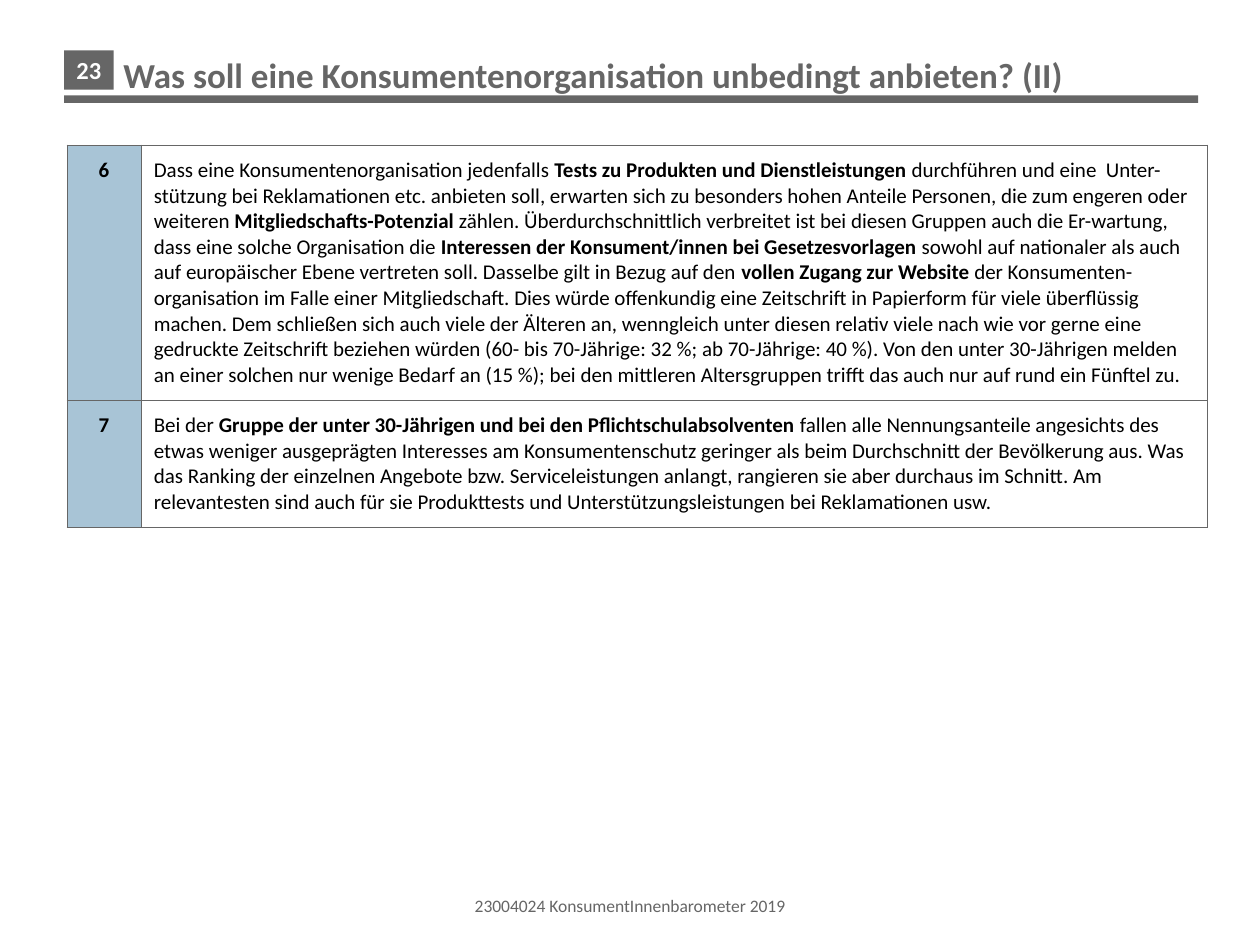
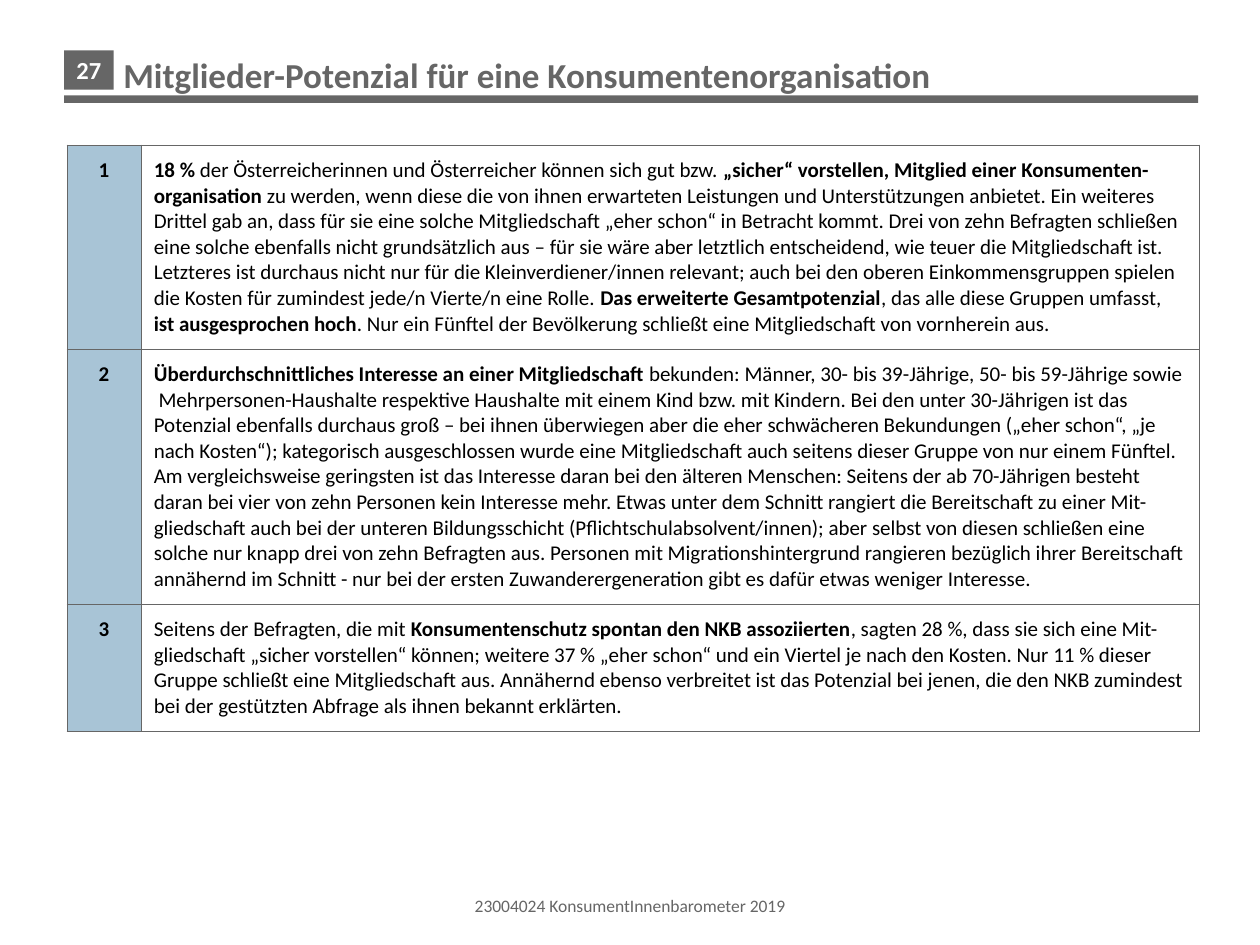
from lxml import etree
from pptx import Presentation
from pptx.dml.color import RGBColor
from pptx.enum.shapes import MSO_SHAPE
from pptx.enum.text import MSO_ANCHOR, PP_ALIGN
from pptx.oxml import parse_xml
from pptx.oxml.ns import nsdecls
from pptx.util import Pt

RECTANGLE = MSO_SHAPE.RECTANGLE
MIDDLE = MSO_ANCHOR.MIDDLE
LEFT, CENTER = PP_ALIGN.LEFT, PP_ALIGN.CENTER

FONT = "Calibri"
GREY, BLUE, WHITE, BLACK = "666666", "A8C4D6", "FFFFFF", "000000"
FOOTER = "23004024 KonsumentInnenbarometer 2019"

NUMBER_WIDTH = 42.5
CELL_MARGIN = 7.2
LINE_HEIGHT = 14.6

# Page number, title, width of the text column, and rows of (number, lines, sentences).
# Text between ** marks is bold.
PAGES = [
    ("23", "Was soll eine Konsumentenorganisation unbedingt anbieten? (II)", 609.1, [
        ("6", 9, [
            "Dass eine Konsumentenorganisation jedenfalls **Tests zu Produkten und "
            "Dienstleistungen **durchführen und eine  Unter-stützung bei Reklamationen etc. "
            "anbieten soll, erwarten sich zu besonders hohen Anteile Personen, die zum engeren "
            "oder weiteren **Mitgliedschafts-Potenzial **zählen.",
            "Überdurchschnittlich verbreitet ist bei diesen Gruppen auch die Er-wartung, dass "
            "eine solche Organisation die **Interessen der Konsument/innen bei "
            "Gesetzesvorlagen **sowohl auf nationaler als auch auf europäischer Ebene "
            "vertreten soll.",
            "Dasselbe gilt in Bezug auf den **vollen Zugang zur Website **der "
            "Konsumenten-organisation im Falle einer Mitgliedschaft.",
            "Dies würde offenkundig eine Zeitschrift in Papierform für viele überflüssig "
            "machen.",
            "Dem schließen sich auch viele der Älteren an, wenngleich unter diesen relativ "
            "viele nach wie vor gerne eine gedruckte Zeitschrift beziehen würden (60- bis "
            "70-Jährige: 32 %; ab 70-Jährige: 40 %).",
            "Von den unter 30-Jährigen melden an einer solchen nur wenige Bedarf an (15 %); "
            "bei den mittleren Altersgruppen trifft das auch nur auf rund ein Fünftel zu.",
        ]),
        ("7", 4, [
            "Bei der **Gruppe der unter 30-Jährigen und bei den Pflichtschulabsolventen "
            "**fallen alle Nennungsanteile angesichts des etwas weniger ausgeprägten "
            "Interesses am Konsumentenschutz geringer als beim Durchschnitt der Bevölkerung "
            "aus.",
            "Was das Ranking der einzelnen Angebote bzw. Serviceleistungen anlangt, rangieren "
            "sie aber durchaus im Schnitt.",
            "Am relevantesten sind auch für sie Produkttests und Unterstützungsleistungen bei "
            "Reklamationen usw.",
        ]),
    ]),
    ("27", "Mitglieder-Potenzial für eine Konsumentenorganisation", 604.8, [
        ("1", 7, [
            "**18 %** der Österreicherinnen und Österreicher können sich gut bzw. **„sicher“ "
            "vorstellen, Mitglied einer Konsumenten-organisation** zu werden, wenn diese die "
            "von ihnen erwarteten Leistungen und Unterstützungen anbietet.",
            "Ein weiteres Drittel gab an, dass für sie eine solche Mitgliedschaft „eher "
            "schon“ in Betracht kommt.",
            "Drei von zehn Befragten schließen eine solche ebenfalls nicht grundsätzlich aus "
            "– für sie wäre aber letztlich entscheidend, wie teuer die Mitgliedschaft ist.",
            "Letzteres ist durchaus nicht nur für die Kleinverdiener/innen relevant; auch bei "
            "den oberen Einkommensgruppen spielen die Kosten für zumindest jede/n Vierte/n "
            "eine Rolle.",
            "**Das erweiterte Gesamtpotenzial**, das alle diese Gruppen umfasst, **ist "
            "ausgesprochen hoch**.",
            "Nur ein Fünftel der Bevölkerung schließt eine Mitgliedschaft von vornherein aus.",
        ]),
        ("2", 9, [
            "**Überdurchschnittliches Interesse an einer Mitgliedschaft **bekunden: Männer, "
            "30- bis 39-Jährige, 50- bis 59-Jährige sowie  Mehrpersonen-Haushalte respektive "
            "Haushalte mit einem Kind bzw. mit Kindern.",
            "Bei den unter 30-Jährigen ist das Potenzial ebenfalls durchaus groß – bei ihnen "
            "überwiegen aber die eher schwächeren Bekundungen („eher schon“, „je nach "
            "Kosten“); kategorisch ausgeschlossen wurde eine Mitgliedschaft auch seitens "
            "dieser Gruppe von nur einem Fünftel.",
            "Am vergleichsweise geringsten ist das Interesse daran bei den älteren Menschen: "
            "Seitens der ab 70-Jährigen besteht daran bei vier von zehn Personen kein "
            "Interesse mehr.",
            "Etwas unter dem Schnitt rangiert die Bereitschaft zu einer Mit-gliedschaft auch "
            "bei der unteren Bildungsschicht (Pflichtschulabsolvent/innen); aber selbst von "
            "diesen schließen eine solche nur knapp drei von zehn Befragten aus.",
            "Personen mit Migrationshintergrund rangieren bezüglich ihrer Bereitschaft "
            "annähernd im Schnitt - nur bei der ersten Zuwanderergeneration gibt es dafür "
            "etwas weniger Interesse.",
        ]),
        ("3", 4, [
            "Seitens der Befragten, die mit **Konsumentenschutz spontan den NKB "
            "assoziierten**, sagten 28 %, dass sie sich eine Mit-gliedschaft „sicher "
            "vorstellen“ können; weitere 37 % „eher schon“ und ein Viertel je nach den "
            "Kosten.",
            "Nur 11 % dieser Gruppe schließt eine Mitgliedschaft aus.",
            "Annähernd ebenso verbreitet ist das Potenzial bei jenen, die den NKB zumindest "
            "bei der gestützten Abfrage als ihnen bekannt erklärten.",
        ]),
    ]),
]


def color(hex_code):
    return RGBColor.from_string(hex_code)


def write(frame, text, size, hex_code, align=LEFT, bold=False):
    """Fill a text frame; each ** mark switches bold on or off."""
    para = frame.paragraphs[0]
    para.alignment = align
    para.font.name = FONT
    para.font.size = Pt(size)
    para.font.color.rgb = color(hex_code)
    para.font.bold = bold
    for index, part in enumerate(text.split("**")):
        if part:
            span = para.add_run()
            span.text = part
            if index % 2:
                span.font.bold = True


deck = Presentation()
deck.slide_width, deck.slide_height = Pt(720), Pt(540)

for number, title, text_width, rows in PAGES:
    page = deck.slides.add_slide(deck.slide_layouts[6])

    # Page number block and rule under the title
    badge = page.shapes.add_shape(RECTANGLE, Pt(36.7), Pt(28.8), Pt(28.3), Pt(22.5))
    rule = page.shapes.add_shape(RECTANGLE, Pt(36.7), Pt(54.6), Pt(648), Pt(4.2))
    for block in (badge, rule):
        block.shadow.inherit = False
        block.fill.solid()
        block.fill.fore_color.rgb = color(GREY)
        block.line.fill.background()
    badge.text_frame.word_wrap = False
    badge.text_frame.vertical_anchor = MIDDLE
    write(badge.text_frame, number, 14, WHITE, CENTER, bold=True)

    # Title and footer
    for left, top, width, height, text, size, align, bold in (
        (63.4, 25.9, 624.2, 33.8, title, 20, LEFT, True),
        (37.4, 504.7, 645.1, 25.9, FOOTER, 10, CENTER, False),
    ):
        box = page.shapes.add_textbox(Pt(left), Pt(top), Pt(width), Pt(height))
        box.text_frame.word_wrap = True
        box.text_frame.vertical_anchor = MIDDLE
        write(box.text_frame, text, size, GREY, align, bold)

    # Table of numbered findings
    heights = [lines * LINE_HEIGHT + 2 * CELL_MARGIN for _, lines, _ in rows]
    table = page.shapes.add_table(
        len(rows), 2, Pt(38.2), Pt(82.8), Pt(NUMBER_WIDTH + text_width), Pt(sum(heights))
    ).table
    table.first_row = table.horz_banding = False
    table.columns[0].width = Pt(NUMBER_WIDTH)
    table.columns[1].width = Pt(text_width)

    for row, height, (finding_number, _, sentences) in zip(table.rows, heights, rows):
        row.height = Pt(height)
        for cell in row.cells:
            cell.margin_left = cell.margin_right = Pt(CELL_MARGIN)
            cell.margin_top = cell.margin_bottom = Pt(CELL_MARGIN)
            properties = cell._tc.get_or_add_tcPr()
            for side in ("lnL", "lnR", "lnT", "lnB"):
                border = parse_xml(f'<a:{side} {nsdecls("a")} w="{Pt(0.25)}"/>')
                fill = etree.SubElement(border, border.tag.replace(side, "solidFill"))
                etree.SubElement(fill, border.tag.replace(side, "srgbClr"), val=GREY)
                properties.append(border)
        number_cell, text_cell = row.cells
        number_cell.fill.solid()
        number_cell.fill.fore_color.rgb = color(BLUE)
        text_cell.fill.background()
        write(number_cell.text_frame, finding_number, 12, BLACK, CENTER, bold=True)
        write(text_cell.text_frame, " ".join(sentences), 12, BLACK)

deck.save("out.pptx")
